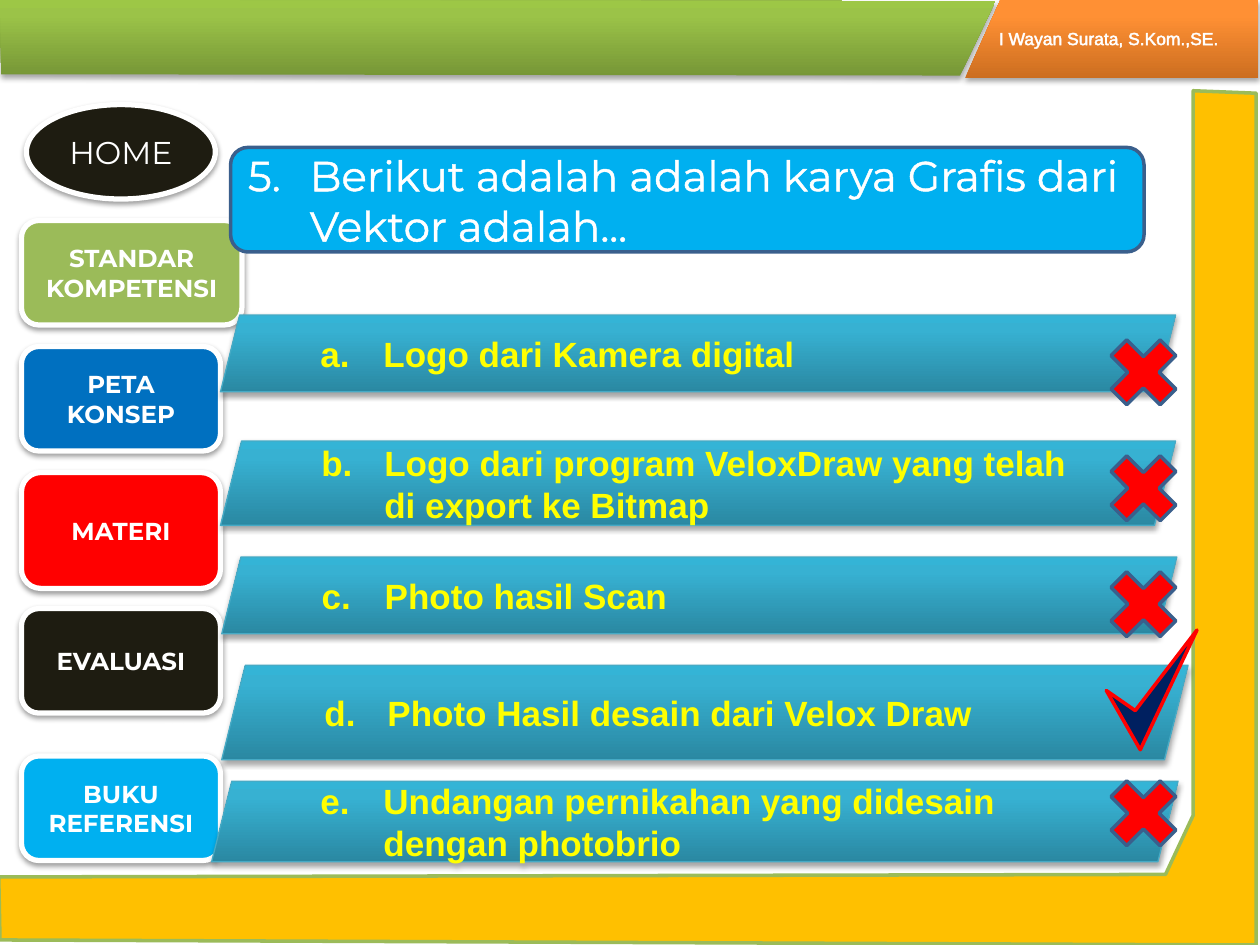
"""Build a quiz slide with a navigation menu, five answers and their marks."""
from copy import deepcopy

from pptx import Presentation, util as u
from pptx.dml.color import RGBColor
from pptx.enum import shapes, text
from pptx.oxml import parse_xml
from pptx.oxml.ns import nsdecls, qn

COLORS = {
    "white": "FFFFFF", "black": "1E1C11", "olive": "9BBB59", "blue": "0070C0",
    "red": "FF0000", "sky": "00B0F0", "amber": "FFC000", "navy": "002060",
    "steel": "3A5F8C", "teal": "46AAC5", "yellow": "FFFF00",
}
GRADIENTS = {
    "green": ("779737", "9BC348", "9DC746"),
    "orange": ("CC6E20", "FF9034", "FF9136"),
    "teal": ("2A88A2", "37B1D2", "34B4D6"),
}
STOPS = (0, 0.8, 1)
KIND = shapes.MSO_SHAPE
ROUNDED, SLANTED = KIND.ROUNDED_RECTANGLE, KIND.PARALLELOGRAM

MENU = [
    ("HOME", KIND.OVAL, (0.21, 0.83, 1.5, 0.75), "black", 18, False),
    ("STANDAR KOMPETENSI", ROUNDED, (0.17, 1.75, 1.75, 0.83), "olive", 14, True),
    ("PETA KONSEP", ROUNDED, (0.17, 2.75, 1.58, 0.83), "blue", 14, True),
    ("MATERI", ROUNDED, (0.17, 3.75, 1.58, 0.92), "red", 14, True),
    ("EVALUASI", ROUNDED, (0.17, 4.83, 1.58, 0.83), "black", 14, True),
    ("BUKU REFERENSI", ROUNDED, (0.17, 6, 1.58, 0.83), "sky", 14, True),
]
FRAME = [(-0.01, 6.96), (9.25, 6.94), (9.47, 6.47), (9.47, 0.72),
         (9.97, 0.74), (9.97, 7.5), (0, 7.46)]
HEADERS = [
    ([(0, 0), (7.9, 0.01), (7.62, 0.6), (0.01, 0.59)], "green"),
    ([(7.94, 0), (9.99, 0), (9.99, 0.62), (7.66, 0.62)], "orange"),
]
AUTHOR = "I Wayan Surata, S.Kom.,SE."
QUESTION = "5.\tBerikut adalah adalah karya Grafis dari Vektor adalah..."
ANSWERS = [
    ("a.\tLogo dari Kamera digital", (1.75, 2.5, 7.58, 0.61), 0.5),
    ("b.\tLogo dari program VeloxDraw yang telah di export ke Bitmap",
     (1.75, 3.5, 7.58, 0.67), 0.5),
    ("c.\tPhoto hasil Scan", (1.76, 4.42, 7.58, 0.61), 0.5),
    ("d.\tPhoto Hasil desain dari Velox Draw", (1.76, 5.28, 7.67, 0.75), 0.5),
    ("e.\tUndangan pernikahan yang didesain dengan photobrio",
     (1.68, 6.2, 7.67, 0.64), 0.56),
]
CROSS_TOPS = (2.58, 3.5, 4.42, 6.08)
CHECK = [(8.78, 5.48), (9.01, 5.64), (9.5, 5), (9.05, 5.95)]


def rgb(name):
    return RGBColor.from_string(COLORS[name])


def paint(shape, fill=None, gradient=None, line=None, width=2, shadow=None):
    shape.shadow.inherit = False
    if gradient:
        shape.fill.gradient()
        shape.fill.gradient_angle = 90
        stop_list = shape._element.spPr.find(".//" + qn("a:gsLst"))
        stop_list.append(deepcopy(stop_list[-1]))
        for stop, position, color in zip(shape.fill.gradient_stops, STOPS, GRADIENTS[gradient]):
            stop.position = position
            stop.color.rgb = RGBColor.from_string(color)
    else:
        shape.fill.solid()
        shape.fill.fore_color.rgb = rgb(fill)
    if line:
        shape.line.color.rgb = rgb(line)
        shape.line.width = u.Pt(width)
    else:
        shape.line.fill.background()
    if shadow:
        opacity, distance = shadow
        shape._element.spPr.find(qn("a:effectLst")).append(parse_xml(
            f'<a:outerShdw {nsdecls("a")} blurRad="40000" dist="{distance}" dir="5400000" '
            f'rotWithShape="0"><a:srgbClr val="000000"><a:alpha val="{opacity}"/>'
            '</a:srgbClr></a:outerShdw>'))


def write(shape, words, size, font, color="white", bold=False, centered=False,
          margin=0, hanging=0, outlined=False):
    paragraph = shape.text_frame.paragraphs[0]
    run = paragraph.add_run()
    run.text = words
    paragraph.alignment = text.PP_ALIGN.CENTER if centered else text.PP_ALIGN.LEFT
    if margin:
        properties = paragraph._p.get_or_add_pPr()
        properties.set("marL", str(u.Inches(margin)))
        properties.set("indent", str(u.Inches(-hanging)))
    paragraph.font.size = u.Pt(size)
    paragraph.font.name = font
    paragraph.font.bold = bold
    paragraph.font.color.rgb = rgb(color)
    if outlined:
        run._r.get_or_add_rPr().insert(0, parse_xml(
            f'<a:ln {nsdecls("a")} w="18415"><a:solidFill>'
            f'<a:srgbClr val="{COLORS[color]}"/></a:solidFill></a:ln>'))


def add_shape(slide, kind, box, **style):
    shape = slide.shapes.add_shape(kind, *map(u.Inches, box))
    paint(shape, **style)
    return shape


def add_outline(slide, points, **style):
    start, *rest = [(u.Inches(x), u.Inches(y)) for x, y in points]
    builder = slide.shapes.build_freeform(*start)
    builder.add_line_segments(rest, close=True)
    paint(builder.convert_to_shape(), **style)


def main():
    presentation = Presentation()
    presentation.slide_width, presentation.slide_height = u.Inches(10), u.Inches(7.5)
    slide = presentation.slides.add_slide(presentation.slide_layouts[6])
    strong_shadow, soft_shadow = (38000, 20000), (35000, 23000)

    for label, kind, box, fill, size, bold in MENU:
        button = add_shape(slide, kind, box, fill=fill, line="white", width=3,
                           shadow=strong_shadow)
        write(button, label, size, "Montserrat", bold=bold, centered=True)

    add_outline(slide, FRAME, fill="amber", line="olive")
    for points, gradient in HEADERS:
        add_outline(slide, points, gradient=gradient, shadow=soft_shadow)
    author = slide.shapes.add_textbox(*map(u.Inches, (7.83, 0.17, 2.17, 0.27)))
    author.text_frame.word_wrap = True
    write(author, AUTHOR, 10, "Arial", outlined=True)

    question = add_shape(slide, ROUNDED, (1.83, 1.17, 7.25, 0.83), fill="sky", line="steel")
    write(question, QUESTION, 24, "Montserrat", margin=0.49, hanging=0.49, outlined=True)

    for words, box, margin in ANSWERS:
        bar = add_shape(slide, SLANTED, box, gradient="teal", line="teal", width=0.75,
                        shadow=soft_shadow)
        write(bar, words, 20, "Arial", "yellow", bold=True, margin=margin, hanging=0.5)

    for top in CROSS_TOPS:
        add_shape(slide, KIND.MATH_MULTIPLY, (8.7, top, 0.75, 0.75), fill="red", line="steel")
    add_outline(slide, CHECK, fill="navy", line="red")

    presentation.save("out.pptx")


if __name__ == "__main__":
    main()
